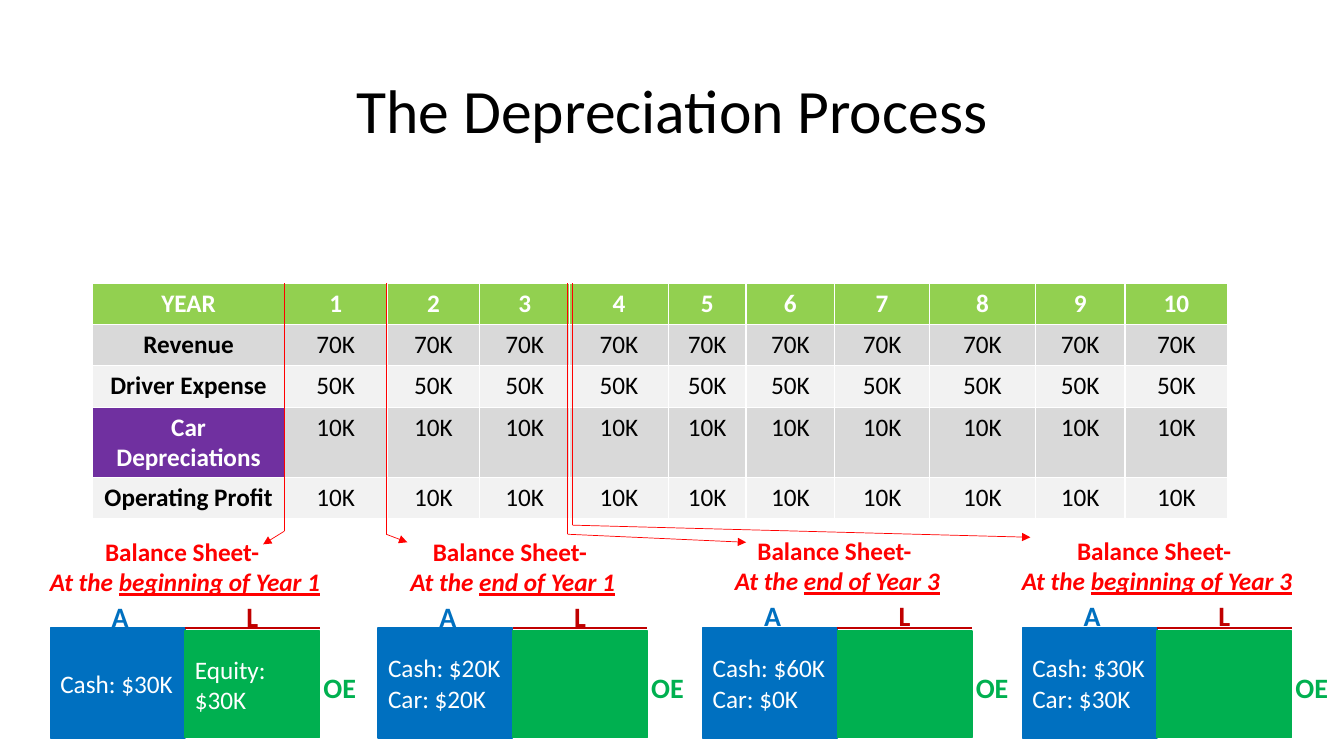
from lxml import etree
from pptx import Presentation
from pptx import util as u
from pptx.dml.color import RGBColor
from pptx.enum import shapes, text
from pptx.oxml import ns

WHITE = RGBColor(0xFF, 0xFF, 0xFF)
BLACK = RGBColor(0, 0, 0)
LIME = RGBColor(0x92, 0xD0, 0x50)
GRAY = RGBColor(0xD9, 0xD9, 0xD9)
PALE = RGBColor(0xF2, 0xF2, 0xF2)
PURPLE = RGBColor(0x70, 0x30, 0xA0)
BLUE = RGBColor(0, 0x70, 0xC0)
GREEN = RGBColor(0, 0xB0, 0x50)
MAROON = RGBColor(0xC0, 0, 0)
RED = RGBColor(0xFF, 0, 0)

WIDE, HIGH = 13.33, 7.5
LEFT, TOP, ROW = 0.92, 2.81, 0.41
COLS = [1.9, 1.02, 0.92, 0.89, 0.98, 0.77, 0.88, 0.94, 1.05, 0.89, 1.02]
ROWS = [("Revenue", "70K"), ("Driver Expense", "50K"),
        ("Car Depreciations", "10K"), ("Operating Profit", "10K")]

HALF = 1.335   # width of one side of a balance sheet
BASE = 6.23    # top of the balance sheets
SHEETS = [  # left, caption top, period, assets, equity
    (0.5, 5.27, "beginning of Year 1", "Cash: $30K", "Equity: $30K"),
    (3.75, 5.27, "end of Year 1", "Cash: $20K\nCar: $20K", ""),
    (6.97, 5.26, "end of Year 3", "Cash: $60K\nCar: $0K", ""),
    (10.14, 5.26, "beginning of Year 3", "Cash: $30K\nCar: $30K", ""),
]
ARROWS = [  # x of the drop, y of the bend, arrow tip
    (2.82, 5.27, (2.61, 5.4)),
    (3.83, 5.3, (4.04, 5.38)),
    (5.63, 5.3, (7.4, 5.38)),
    (5.68, 5.21, (10.22, 5.33)),
]


def style(run, size, color, bold=False):
    font = run.font
    font.name, font.size, font.bold = "Calibri", u.Pt(size), bold
    font.color.rgb = color


def label(slide, box, words, size, color, bold=True, align=None, wrap=False):
    """Add a text box and return its frame; lines become paragraphs."""
    shape = slide.shapes.add_textbox(*map(u.Inches, box))
    frame = shape.text_frame
    frame.text = words
    frame.word_wrap = wrap
    for para in frame.paragraphs:
        para.alignment = align
        for run in para.runs:
            style(run, size, color, bold)
    return frame


def line(slide, start, end, color, width, arrow=False):
    ends = map(u.Inches, (*start, *end))
    link = slide.shapes.add_connector(shapes.MSO_CONNECTOR.STRAIGHT, *ends)
    link.line.color.rgb = color
    link.line.width = u.Pt(width)
    if arrow:
        stroke = link.line._get_or_add_ln()
        etree.SubElement(stroke, ns.qn("a:tailEnd"), type="triangle")
    etree.SubElement(link._element.spPr, ns.qn("a:effectLst"))


def block(slide, box, color, words):
    shape = slide.shapes.add_shape(
        shapes.MSO_SHAPE.RECTANGLE, *map(u.Inches, box))
    shape.shadow.inherit = False
    shape.fill.solid()
    shape.fill.fore_color.rgb = color
    shape.line.color.rgb = color
    shape.line.width = u.Pt(1)
    frame = shape.text_frame
    frame.text = words
    frame.margin_right = 0
    frame.vertical_anchor = text.MSO_ANCHOR.MIDDLE
    for para in frame.paragraphs:
        para.alignment = text.PP_ALIGN.LEFT
        for run in para.runs:
            style(run, 18, WHITE)


def title(slide, box):
    frame = label(slide, box, "The Depreciation Process", 44, BLACK, False,
                  text.PP_ALIGN.CENTER, True)
    frame.vertical_anchor = text.MSO_ANCHOR.MIDDLE
    frame.paragraphs[0].line_spacing = 0.9


def ledger(slide, left, top):
    """Add the ten-year profit table."""
    years = len(COLS) - 1
    data = [["YEAR", *map(str, range(1, years + 1))]]
    data += [[name] + [value] * years for name, value in ROWS]
    size = (left, top, sum(COLS), ROW * len(data))
    table = slide.shapes.add_table(
        len(data), len(COLS), *map(u.Inches, size)).table
    for col, width in zip(table.columns, COLS):
        col.width = u.Inches(width)
    for r, row in enumerate(data):
        for c, words in enumerate(row):
            cell = table.cell(r, c)
            fill, ink = (GRAY if r % 2 else PALE), BLACK
            if r == 0:
                fill, ink = LIME, WHITE
            elif words == "Car Depreciations":
                fill, ink = PURPLE, WHITE
            cell.fill.solid()
            cell.fill.fore_color.rgb = fill
            cell.text = words
            para = cell.text_frame.paragraphs[0]
            para.alignment = text.PP_ALIGN.CENTER
            style(para.runs[0], 18, ink, r == 0 or c == 0)


def sheet(slide, left, top, period, assets, equity):
    """Add one balance sheet with its caption above."""
    mid, end = left + HALF, left + 2 * HALF
    block(slide, (left, BASE, HALF, 1.09), BLUE, assets)
    line(slide, (mid, BASE), (end, BASE), MAROON, 2)
    block(slide, (mid, BASE + 0.03, HALF, 1.06), GREEN, equity)
    label(slide, (left + 0.51, top + 0.63, 0.37, 0.44), "A", 20, BLUE)
    label(slide, (end - 0.06, BASE + 0.37, 0.53, 0.44), "OE", 20, GREEN)
    label(slide, (mid + 0.51, top + 0.63, 0.32, 0.44), "L", 20, MAROON)

    wide = 2.92 if period.startswith("beginning") else 2.26
    frame = label(slide, (mid - wide / 2, top, wide, 0.71),
                  "Balance Sheet- \nAt the ", 18, RED,
                  align=text.PP_ALIGN.CENTER)
    para = frame.paragraphs[1]
    when = para.add_run()
    when.text = period
    style(when, 18, RED, True)
    when.font.underline = True
    for run in para.runs:
        run.font.italic = True


def arrow(slide, x, bend, tip):
    line(slide, (x, TOP), (x, bend), RED, 0.5)
    line(slide, (x, bend), tip, RED, 0.5, True)


def main():
    deck = Presentation()
    deck.slide_width, deck.slide_height = u.Inches(WIDE), u.Inches(HIGH)
    slide = deck.slides.add_slide(deck.slide_layouts[6])
    title(slide, (LEFT, 0.4, 11.5, 1.45))
    ledger(slide, LEFT, TOP)
    for item in SHEETS:
        sheet(slide, *item)
    for item in ARROWS:
        arrow(slide, *item)
    deck.save("out.pptx")


if __name__ == "__main__":
    main()
